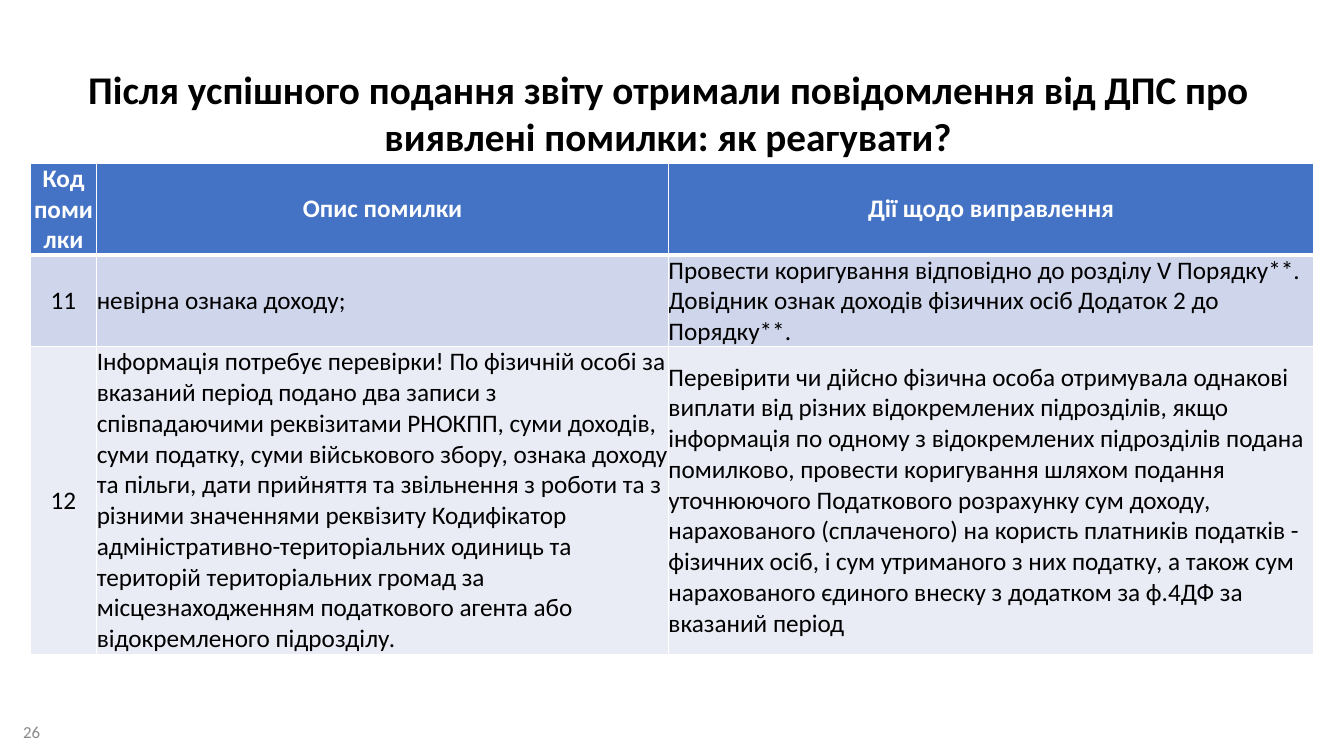
from lxml.etree import SubElement
from pptx import Presentation
from pptx.dml.color import RGBColor
from pptx.enum.text import MSO_ANCHOR, PP_ALIGN
from pptx.oxml.ns import qn
from pptx.util import Pt

PX = 9144
FONT = "Calibri"
WHITE, BLACK, GREY = "FFFFFF", "000000", "898989"
HEADER_FILL = "4472C4"
BAND_FILLS = ["CFD5EA", "E9EBF5"]
COLUMN_WIDTHS = [66, 567, 640]
ROW_HEIGHTS = [91, 91, 305]

TITLE = (
    "Після успішного подання звіту отримали повідомлення від ДПС "
    "про виявлені помилки: як реагувати?"
)
HEADERS = [["Код", "помилки"], ["Опис помилки"], ["Дії щодо виправлення"]]
ERRORS = [
    [
        "11",
        "невірна ознака доходу;",
        "Провести коригування відповідно до розділу V Порядку**. "
        "Довідник ознак доходів фізичних осіб Додаток 2 до Порядку**.",
    ],
    [
        "12",
        "Інформація потребує перевірки! По фізичній особі за вказаний період "
        "подано два записи з співпадаючими реквізитами РНОКПП, суми доходів, "
        "суми податку, суми військового збору, ознака доходу та пільги, дати "
        "прийняття та звільнення з роботи та з різними значеннями реквізиту "
        "Кодифікатор адміністративно-територіальних одиниць та територій "
        "територіальних громад за місцезнаходженням податкового агента або "
        "відокремленого підрозділу.",
        "Перевірити чи дійсно фізична особа отримувала однакові виплати від "
        "різних відокремлених підрозділів, якщо інформація по одному з "
        "відокремлених підрозділів подана помилково, провести коригування "
        "шляхом подання уточнюючого Податкового розрахунку сум доходу, "
        "нарахованого (сплаченого) на користь платників податків - фізичних "
        "осіб, і сум утриманого з них податку, а також сум нарахованого "
        "єдиного внеску з додатком за ф.4ДФ за вказаний період",
    ],
]


def color(value):
    """Turn a hex string into a colour."""
    return RGBColor.from_string(value)


def write_text(frame, lines, size, ink, bold=False, align=PP_ALIGN.LEFT):
    """Write each line as a paragraph with one run."""
    for index, line in enumerate(lines):
        paragraph = frame.add_paragraph() if index else frame.paragraphs[0]
        paragraph.alignment = align
        run = paragraph.add_run()
        run.text = line
        run.font.name = FONT
        run.font.size = Pt(size)
        run.font.bold = bold
        run.font.color.rgb = color(ink)


def add_label(slide, box, text, size, ink, anchor, **style):
    """Add a wrapped text box."""
    shape = slide.shapes.add_textbox(*(length * PX for length in box))
    frame = shape.text_frame
    frame.word_wrap = True
    frame.vertical_anchor = anchor
    write_text(frame, [text], size, ink, **style)


def set_borders(cell, top, bottom):
    """Draw white cell borders with the given top and bottom widths in points."""
    properties = cell._tc.get_or_add_tcPr()
    for side, width in (("L", 1), ("R", 1), ("T", top), ("B", bottom)):
        line = SubElement(properties, qn(f"a:ln{side}"), w=str(Pt(width)))
        fill = SubElement(line, qn("a:solidFill"))
        SubElement(fill, qn("a:srgbClr"), val=WHITE)


def fill_cell(cell, lines, fill, ink, bold, align, top=1, bottom=1):
    """Style one table cell and write its text."""
    cell.margin_left = cell.margin_right = 0
    cell.margin_top = cell.margin_bottom = 0
    cell.vertical_anchor = MSO_ANCHOR.MIDDLE
    set_borders(cell, top, bottom)
    cell.fill.solid()
    cell.fill.fore_color.rgb = color(fill)
    write_text(cell.text_frame, lines, 18, ink, bold, align)


def add_error_table(slide, left, top):
    """Add the table of error codes, descriptions and corrections."""
    table = slide.shapes.add_table(
        len(ROW_HEIGHTS), len(COLUMN_WIDTHS), left * PX, top * PX,
        sum(COLUMN_WIDTHS) * PX, sum(ROW_HEIGHTS) * PX,
    ).table
    for column, width in zip(table.columns, COLUMN_WIDTHS):
        column.width = width * PX
    for row, height in zip(table.rows, ROW_HEIGHTS):
        row.height = height * PX
    for column, lines in enumerate(HEADERS):
        fill_cell(table.cell(0, column), lines, HEADER_FILL, WHITE, True,
                  PP_ALIGN.CENTER, bottom=3)
    for row, (texts, fill) in enumerate(zip(ERRORS, BAND_FILLS), start=1):
        for column, text in enumerate(texts):
            align = PP_ALIGN.LEFT if column else PP_ALIGN.CENTER
            fill_cell(table.cell(row, column), [text], fill, BLACK, False,
                      align, top=3 if row == 1 else 1)


def main():
    """Build the slide and save it."""
    presentation = Presentation()
    presentation.slide_width = 1333 * PX
    presentation.slide_height = 750 * PX
    slide = presentation.slides.add_slide(presentation.slide_layouts[6])
    add_label(slide, (13, 706, 55, 39), "26", 12, GREY, MSO_ANCHOR.MIDDLE)
    add_label(slide, (52, 60, 1221, 92), TITLE, 28, BLACK, MSO_ANCHOR.TOP,
              bold=True, align=PP_ALIGN.CENTER)
    add_error_table(slide, 30, 162)
    presentation.save("out.pptx")


if __name__ == "__main__":
    main()
